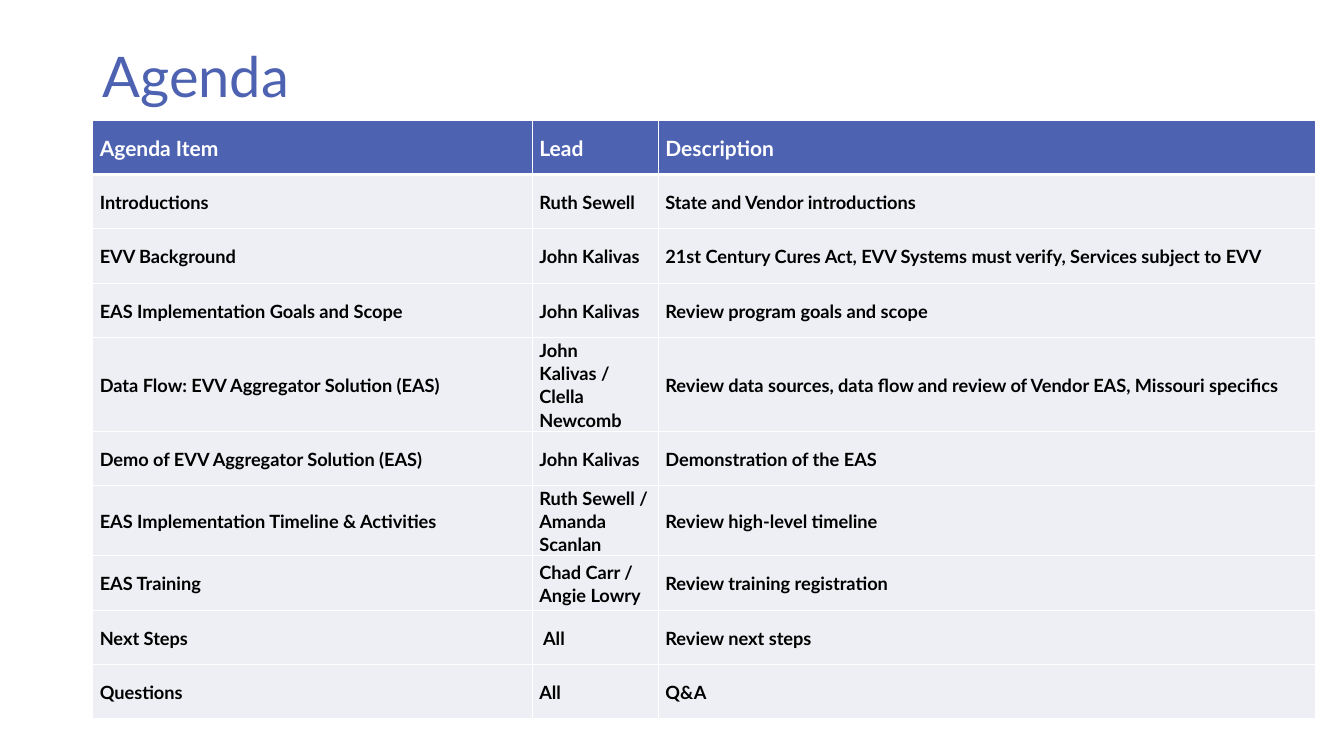
from dataclasses import dataclass

from lxml import etree
from pptx import Presentation
from pptx import util as u
from pptx.dml.color import RGBColor
from pptx.enum import text
from pptx.oxml.ns import qn


@dataclass(frozen=True)
class Theme:
    font: str = "Lato"
    blue: str = "4E62B2"
    tint: str = "414F8C"
    alpha: int = 9
    white: str = "FFFFFF"
    black: str = "000000"
    title: int = 40
    head: int = 15
    body: int = 13


theme = Theme()


def style(para, size, color, bold=False):
    for run in para.runs:
        font = run.font
        font.name, font.size, font.bold = theme.font, u.Pt(size), bold
        font.color.rgb = RGBColor.from_string(color)


def edge(cell, side, width):
    """Draw one white border; call before the cell is filled."""
    line = etree.SubElement(cell._tc.get_or_add_tcPr(), qn(f"a:ln{side}"), w=str(u.Pt(width)))
    fill = etree.SubElement(line, qn("a:solidFill"))
    etree.SubElement(fill, qn("a:srgbClr"), val=theme.white)


rows = [
    ("Agenda Item", "Lead", "Description"),
    ("Introductions", "Ruth Sewell", "State and Vendor introductions"),
    ("EVV Background", "John Kalivas",
     "21st Century Cures Act, EVV Systems must verify, Services subject to EVV"),
    ("EAS Implementation Goals and Scope", "John Kalivas", "Review program goals and scope"),
    ("Data Flow: EVV Aggregator Solution (EAS)", "John Kalivas / Clella Newcomb",
     "Review data sources, data flow and review of Vendor EAS, Missouri specifics"),
    ("Demo of EVV Aggregator Solution (EAS)", "John Kalivas", "Demonstration of the EAS"),
    ("EAS Implementation Timeline & Activities", "Ruth Sewell / Amanda Scanlan",
     "Review high-level timeline"),
    ("EAS Training", "Chad Carr / Angie Lowry", "Review training registration"),
    ("Next Steps", " All", "Review next steps"),
    ("Questions", "All", "Q&A"),
]
widths = [4.36, 1.25, 6.52]
height = 0.54

deck = Presentation()
deck.slide_width, deck.slide_height = u.Inches(13.33), u.Inches(7.5)
slide = deck.slides.add_slide(deck.slide_layouts[6])

# Title
title = slide.shapes.add_textbox(u.Inches(0.92), u.Inches(0.06), u.Inches(11.5), u.Inches(1.45))
frame = title.text_frame
frame.word_wrap = True
frame.vertical_anchor = text.MSO_ANCHOR.MIDDLE
frame.text = "Agenda"
frame.paragraphs[0].line_spacing = 0.9
style(frame.paragraphs[0], theme.title, theme.blue)

# Agenda table
table = slide.shapes.add_table(
    len(rows), len(widths), u.Inches(0.92), u.Inches(1.19),
    u.Inches(sum(widths)), u.Inches(height * len(rows))).table
table.horz_banding = False
for col, width in zip(table.columns, widths):
    col.width = u.Inches(width)

for r, row in enumerate(rows):
    head = r == 0
    table.rows[r].height = u.Inches(height)
    for c, words in enumerate(row):
        cell = table.cell(r, c)
        cell.margin_left = cell.margin_right = u.Inches(0.07)
        cell.margin_top = cell.margin_bottom = 0
        cell.vertical_anchor = text.MSO_ANCHOR.MIDDLE
        for side in "LRTB":
            edge(cell, side, 3 if head and side == "B" else 1)

        cell.fill.solid()
        cell.fill.fore_color.rgb = RGBColor.from_string(theme.blue if head else theme.tint)
        if not head:
            color = cell._tc.tcPr.find(qn("a:solidFill"))[0]
            etree.SubElement(color, qn("a:alpha"), val=str(theme.alpha * 1000))

        cell.text_frame.text = words
        para = cell.text_frame.paragraphs[0]
        para.line_spacing = 1.07
        para.space_after = u.Pt(10)
        style(para, theme.head if head else theme.body,
              theme.white if head else theme.black, bold=True)

deck.save("out.pptx")
